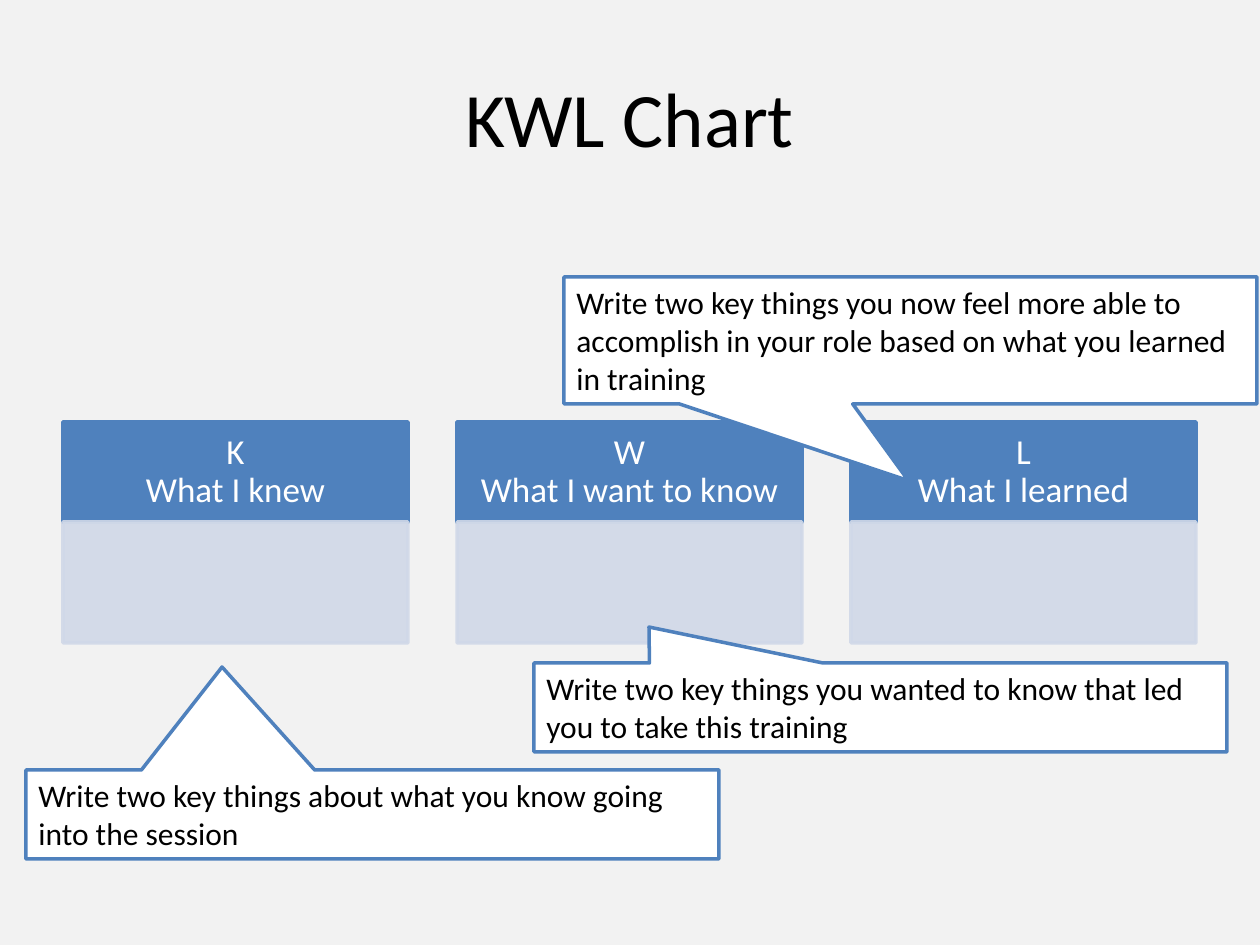
from lxml.etree import SubElement
from pptx import Presentation
from pptx.dml.color import RGBColor
from pptx.enum.shapes import MSO_SHAPE as Shape
from pptx.enum.text import MSO_ANCHOR as Anchor, MSO_AUTO_SIZE as Fit, PP_ALIGN as Align
from pptx.oxml.ns import qn
from pptx.util import Inches, Pt

SCALE = Inches(1) / 126
BLUE, PALE, WHITE, BLACK, GREY = "4F81BD", "D0D8E8", "FFFFFF", "000000", "F2F2F2"


def px(n):
    return round(n * SCALE)


def rgb(code):
    return RGBColor.from_string(code)


def style(item, vals):
    for name, val in vals.items():
        setattr(item, name, val)


class Deck:
    """Holds the house style and the slide being drawn."""

    font = "Calibri"
    width = Pt(2)

    def __init__(self, prs):
        self.slide = prs.slides.add_slide(prs.slide_layouts[5])
        self.shapes = self.slide.shapes
        fill = self.slide.background.fill
        fill.solid()
        fill.fore_color.rgb = rgb(GREY)

    def label(self, shape, text, size, color, align, **frame):
        style(shape.text_frame, {"word_wrap": True, **frame})
        par = shape.text_frame.paragraphs[0]
        par.text = text
        par.alignment = align
        for run in par.runs:
            style(run.font, {"name": self.font, "size": Pt(size)})
            run.font.color.rgb = rgb(color)
        return par

    def title(self, text, box):
        shape = self.shapes.title
        style(shape, dict(zip(("left", "top", "width", "height"), map(px, box))))
        self.label(shape, text, 44, BLACK, Align.CENTER, vertical_anchor=Anchor.MIDDLE)

    def block(self, home, kind, box, fill, line, alpha=None):
        """Draw a filled shape in home; alpha is its opacity in percent."""
        shape = home.add_shape(kind, *map(px, box))
        shape.shadow.inherit = False
        shape.line.width = self.width
        for paint, code in ((shape.fill, fill), (shape.line.fill, line)):
            paint.solid()
            paint.fore_color.rgb = rgb(code)
        if alpha:
            for node in list(shape.element.spPr.iter(qn("a:srgbClr"))):
                SubElement(node, qn("a:alpha"), val=str(alpha * 1000))
        return shape

    def column(self, home, left, top, text):
        wide, head, body = 345, 100, 121
        shape = self.block(home, Shape.RECTANGLE, (left, top, wide, head), BLUE, BLUE)
        par = self.label(shape, text, 20, WHITE, Align.CENTER,
                         vertical_anchor=Anchor.MIDDLE,
                         margin_left=px(20), margin_right=px(20),
                         margin_top=px(11), margin_bottom=px(11))
        par.line_spacing = 0.9
        self.block(home, Shape.RECTANGLE, (left, top + head, wide, body), PALE, PALE, 90)

    def callout(self, text, box, tip):
        """Draw a note; tip is its point, in shares of its size from its centre."""
        shape = self.block(self.shapes, Shape.RECTANGULAR_CALLOUT, box, WHITE, BLUE)
        for i, val in enumerate(tip):
            shape.adjustments[i] = val
        self.label(shape, text, 18, BLACK, Align.LEFT,
                   vertical_anchor=Anchor.TOP, auto_size=Fit.SHAPE_TO_FIT_TEXT)


HEADS = ("K\nWhat I knew", "W\nWhat I want to know", "L\nWhat I learned")
NOTES = (
    ("Write two key things about what you know going into the session",
     (26, 770, 693, 89), (-0.217, -1.657)),
    ("Write two key things you wanted to know that led you to take this training",
     (534, 663, 693, 89), (-0.334, -0.904)),
    ("Write two key things you now feel more able to accomplish in your role "
     "based on what you learned in training",
     (564, 277, 693, 127), (-0.003, 1.104)),
)


def main():
    prs = Presentation()
    style(prs, {"slide_width": px(1260), "slide_height": px(945)})
    deck = Deck(prs)
    deck.title("KWL Chart", (63, 38, 1134, 158))
    group = deck.shapes.add_group_shape()
    for i, head in enumerate(HEADS):
        deck.column(group.shapes, 63 + 394 * i, 422, head)
    for note in NOTES:
        deck.callout(*note)
    prs.save("out.pptx")


if __name__ == "__main__":
    main()
